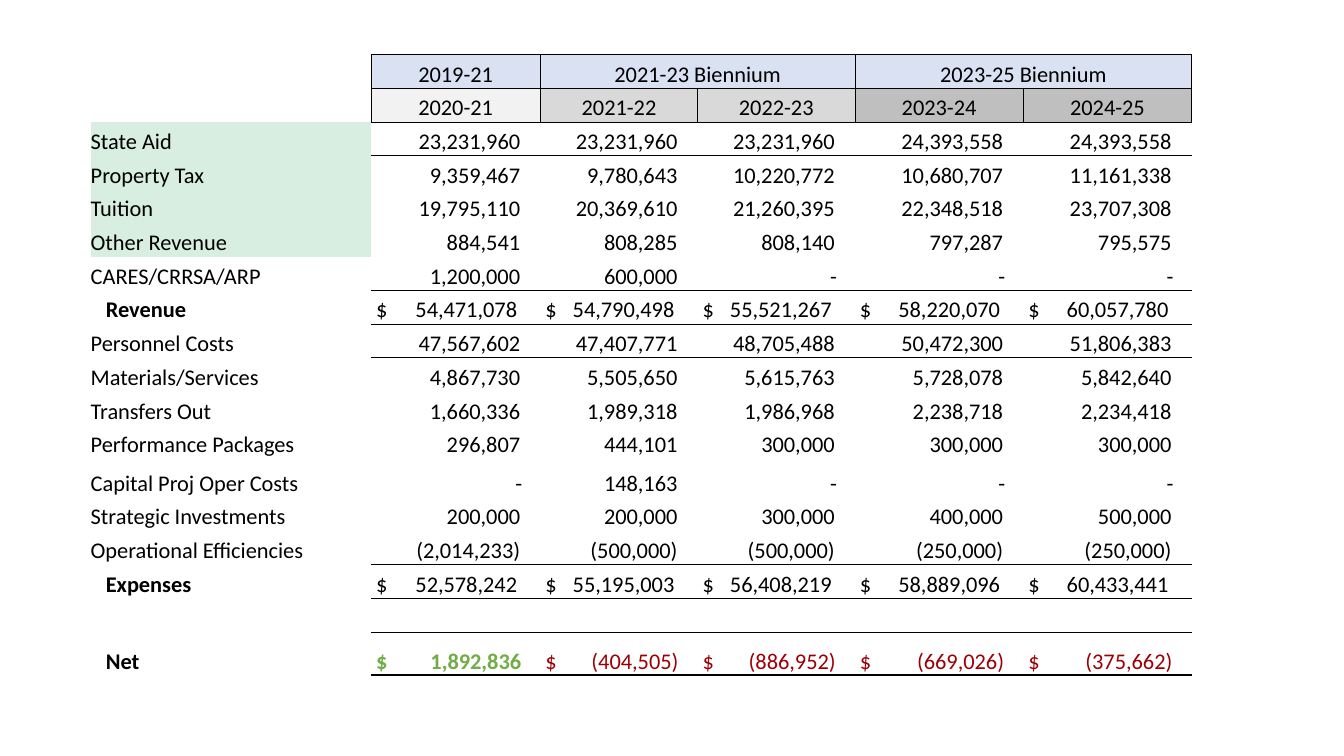
from dataclasses import dataclass

from lxml.etree import SubElement
from pptx import Presentation
from pptx.dml.color import RGBColor
from pptx.enum.text import MSO_ANCHOR, PP_ALIGN
from pptx.oxml.ns import qn
from pptx.util import Inches, Pt


@dataclass(frozen=True)
class Theme:
    font: str = "Calibri"
    size: int = 16
    ink: str = "000000"
    surplus: str = "70AD47"
    deficit: str = "9C0006"
    biennium: str = "D9E1F2"
    current_year: str = "F2F2F2"
    next_years: str = "D9D9D9"
    later_years: str = "BFBFBF"
    revenue_source: str = "D8EEE1"
    thin: float = 0.5
    thick: float = 2


THEME = Theme()
COLUMN_WIDTHS = [2.78, 1.68, 1.56, 1.56, 1.67, 1.67]
TABLE_HEIGHT = 6.16
TALL_ROWS = {"Capital Proj Oper Costs": 0.38, "Net": 0.43}

# (first column, last column, title)
BIENNIA = [(1, 1, "2019-21"), (2, 3, "2021-23 Biennium"), (4, 5, "2023-25 Biennium")]

# (year, fill, bordered edges)
YEARS = [
    ("2020-21", THEME.current_year, "LRTB"),
    ("2021-22", THEME.next_years, "LTB"),
    ("2022-23", THEME.next_years, "RTB"),
    ("2023-24", THEME.later_years, "LTB"),
    ("2024-25", THEME.later_years, "RTB"),
]

BUDGET = [
    ("State Aid", "23,231,960", "23,231,960", "23,231,960", "24,393,558", "24,393,558"),
    ("Property Tax", "9,359,467", "9,780,643", "10,220,772", "10,680,707", "11,161,338"),
    ("Tuition", "19,795,110", "20,369,610", "21,260,395", "22,348,518", "23,707,308"),
    ("Other Revenue", "884,541", "808,285", "808,140", "797,287", "795,575"),
    ("CARES/CRRSA/ARP", "1,200,000", "600,000", "-", "-", "-"),
    ("Revenue", "54,471,078", "54,790,498", "55,521,267", "58,220,070", "60,057,780"),
    ("Personnel Costs", "47,567,602", "47,407,771", "48,705,488", "50,472,300", "51,806,383"),
    ("Materials/Services", "4,867,730", "5,505,650", "5,615,763", "5,728,078", "5,842,640"),
    ("Transfers Out", "1,660,336", "1,989,318", "1,986,968", "2,238,718", "2,234,418"),
    ("Performance Packages", "296,807", "444,101", "300,000", "300,000", "300,000"),
    ("Capital Proj Oper Costs", "-", "148,163", "-", "-", "-"),
    ("Strategic Investments", "200,000", "200,000", "300,000", "400,000", "500,000"),
    ("Operational Efficiencies", "(2,014,233)", "(500,000)", "(500,000)", "(250,000)", "(250,000)"),
    ("Expenses", "52,578,242", "55,195,003", "56,408,219", "58,889,096", "60,433,441"),
    ("", "", "", "", "", ""),
    ("Net", "1,892,836", "(404,505)", "(886,952)", "(669,026)", "(375,662)"),
]
REVENUE_SOURCES = {"State Aid", "Property Tax", "Tuition", "Other Revenue"}
TOTALS = {"Revenue", "Expenses", "Net"}
RULED_BELOW = {"CARES/CRRSA/ARP", "Operational Efficiencies", ""} | TOTALS


class BudgetSlide:
    def __init__(self, slide, theme):
        self.slide = slide
        self.theme = theme

    def grid(self, left, top, widths, heights):
        """Add a table without any built-in style or cell padding."""
        frame = self.slide.shapes.add_table(
            len(heights), len(widths), Inches(left), Inches(top),
            Inches(sum(widths)), Inches(sum(heights)))
        table = frame.table
        table.first_row = table.horz_banding = False
        style_id = table._tbl.tblPr.find(qn("a:tableStyleId"))
        style_id.text = "{2D5ABB26-0587-4C30-8999-92F81FD0307C}"
        for column, width in zip(table.columns, widths):
            column.width = Inches(width)
        for row, height in zip(table.rows, heights):
            row.height = Inches(height)
        for cell in table.iter_cells():
            self.format(cell, margin_left=0, margin_right=0, margin_top=0,
                        margin_bottom=0, vertical_anchor=MSO_ANCHOR.BOTTOM)
            cell.fill.background()
        return table

    def format(self, target, **values):
        for name, value in values.items():
            setattr(target, name, value)

    def put_text(self, cell, text, align=PP_ALIGN.LEFT, color=None, bold=False):
        paragraph = cell.text_frame.paragraphs[0]
        paragraph.alignment = align
        run = paragraph.add_run()
        run.text = text
        self.format(run.font, name=self.theme.font, size=Pt(self.theme.size), bold=bold)
        run.font.color.rgb = RGBColor.from_string(color or self.theme.ink)

    def paint(self, cell, color):
        cell.fill.solid()
        cell.fill.fore_color.rgb = RGBColor.from_string(color)

    def border(self, cell, edges):
        """Draw borders from a dict of edge letter to line width in points."""
        properties = cell._tc.get_or_add_tcPr()
        ordered = [edge for edge in "LRTB" if edge in edges]
        for place, edge in enumerate(ordered):
            line = SubElement(properties, qn(f"a:ln{edge}"), w=str(Pt(edges[edge])))
            fill = SubElement(line, qn("a:solidFill"))
            SubElement(fill, qn("a:srgbClr"), val=self.theme.ink)
            properties.insert(place, line)

    def heading(self, cell, text, color, edges):
        self.put_text(cell, text, PP_ALIGN.CENTER)
        self.border(cell, dict.fromkeys(edges, self.theme.thin))
        self.paint(cell, color)

    def amount(self, cell, text):
        cell.margin_right = Inches(0.18 if text == "-" else 0.2)
        self.put_text(cell, text, PP_ALIGN.RIGHT)

    def total(self, cell, text, width, gap, color=None, bold=False):
        """Set a dollar sign at the left and the figure at a right tab stop."""
        inset = 0.05
        cell.margin_left = Inches(inset)
        self.put_text(cell, f"$\t{text}", color=color, bold=bold)
        properties = cell.text_frame.paragraphs[0]._p.get_or_add_pPr()
        stops = SubElement(properties, qn("a:tabLst"))
        SubElement(stops, qn("a:tab"), pos=str(Inches(width - gap - inset)), algn="r")

    def headings(self, table):
        thin = self.theme.thin
        for first, last, title in BIENNIA:
            cell = table.cell(0, first)
            for column in range(first + 1, last + 1):
                self.border(table.cell(0, column), dict.fromkeys("LRTB", thin))
            if last > first:
                cell.merge(table.cell(0, last))
            self.heading(cell, title, self.theme.biennium, "LRTB")
        for column, (year, color, edges) in enumerate(YEARS, 1):
            self.heading(table.cell(1, column), year, color, edges)
        for row in range(2):
            self.border(table.cell(row, 0), {"R": thin})

    def label(self, cell, text):
        is_total = text in TOTALS
        cell.margin_left = Inches(0.15 if is_total else 0)
        self.put_text(cell, text, bold=is_total)
        if text in REVENUE_SOURCES:
            self.paint(cell, self.theme.revenue_source)

    def budget_row(self, table, row, label, amounts, ruled_above):
        theme = self.theme
        edges = {"T": theme.thin} if ruled_above else {}
        if label in RULED_BELOW:
            edges["B"] = theme.thick if label == "Net" else theme.thin
        if label:
            self.label(table.cell(row, 0), label)
        for column, text in enumerate(amounts, 1):
            cell = table.cell(row, column)
            self.border(cell, edges)
            width = COLUMN_WIDTHS[column]
            if label == "Net":
                surplus = not text.startswith("(")
                color = theme.surplus if surplus else theme.deficit
                self.total(cell, text, width, 0.19, color, surplus)
            elif label in TOTALS:
                self.total(cell, text, width, 0.23)
            elif text:
                self.amount(cell, text)


def main():
    deck = Presentation()
    deck.slide_width, deck.slide_height = Inches(13.33), Inches(7.5)
    page = BudgetSlide(deck.slides.add_slide(deck.slide_layouts[6]), THEME)
    row_count = len(BUDGET) + 2
    row_height = (TABLE_HEIGHT - sum(TALL_ROWS.values())) / (row_count - len(TALL_ROWS))
    heights = [row_height] * 2 + [TALL_ROWS.get(line[0], row_height) for line in BUDGET]
    table = page.grid(0.9, 0.54, COLUMN_WIDTHS, heights)
    page.headings(table)
    ruled_above = True
    for row, (label, *amounts) in enumerate(BUDGET, 2):
        page.budget_row(table, row, label, amounts, ruled_above)
        ruled_above = label in RULED_BELOW
    deck.save("out.pptx")


if __name__ == "__main__":
    main()
